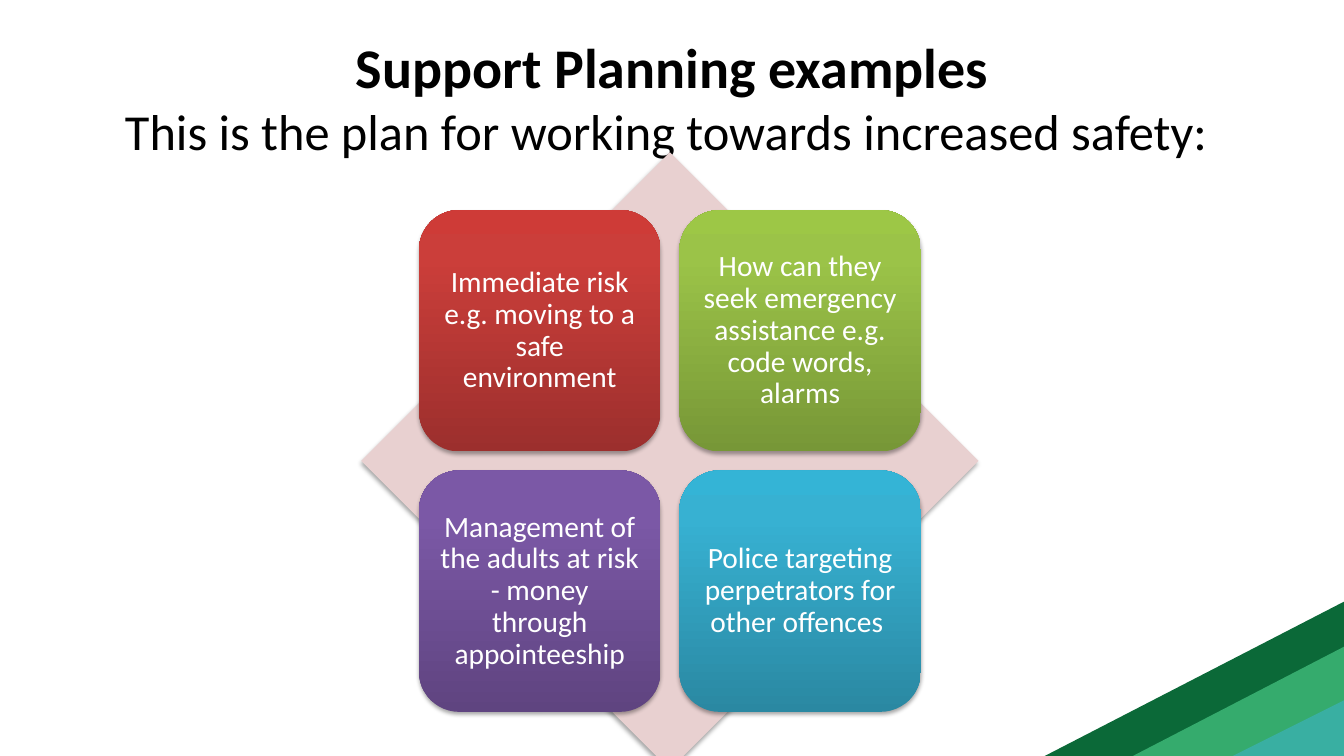
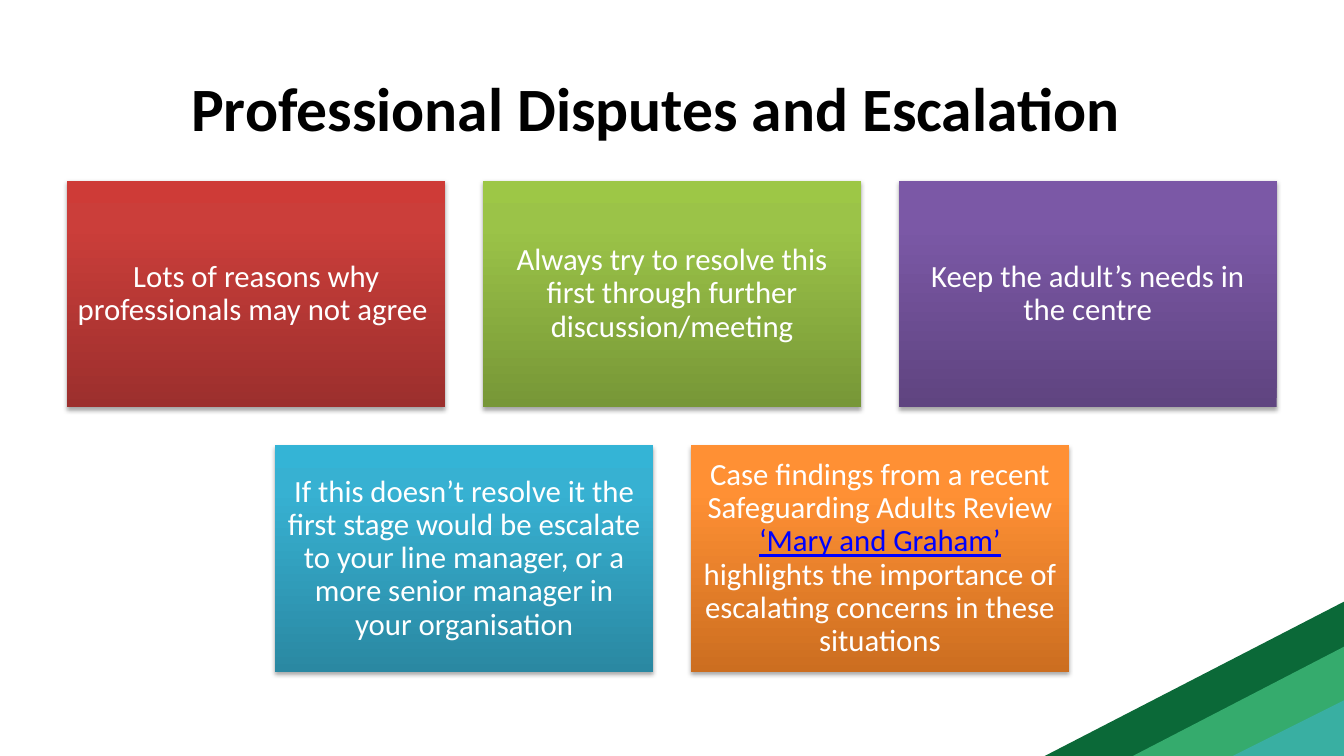
from copy import deepcopy
from dataclasses import dataclass

from lxml import etree
from pptx import Presentation
from pptx import util as u
from pptx.dml import color as c
from pptx.enum import shapes, text
from pptx.oxml import ns

PX = 9525
WIDE, HIGH = 1280, 720
GEOM = shapes.MSO_SHAPE


@dataclass(frozen=True)
class Theme:
    face: str = "Calibri"
    ink: str = "000000"
    white: str = "FFFFFF"
    link: str = "0000FF"
    pale: str = "E8D0D0"
    bands: tuple = ("0B6938", "35AB6D", "39AFA2")
    red: tuple = ("9C2F2D", "CB3E3A", "CE3B37")
    green: tuple = ("779737", "9BC348", "9DC746")
    violet: tuple = ("5F4480", "7B58A6", "7C57A8")
    blue: tuple = ("2A88A2", "37B1D2", "34B4D6")
    orange: tuple = ("CC6E20", "FF9034", "FF9136")
    stops: tuple = (0, 0.8, 1)
    head: int = 40
    lead: int = 36
    title: int = 44
    tile: int = 21
    card: int = 22


T = Theme()
FILLS = (T.red, T.green, T.violet, T.blue, T.orange)


def put(item, vals):
    for key, val in vals.items():
        setattr(item, key, val)


def span(*box):
    return [u.Emu(v * PX) for v in box]


def rgb(code):
    return c.RGBColor.from_string(code)


def shade(shape):
    glow = shape._element.spPr.find(ns.qn("a:effectLst"))
    vals = {"blurRad": "40000", "dist": "23000", "dir": "5400000", "rotWithShape": "0"}
    cast = etree.SubElement(glow, ns.qn("a:outerShdw"), vals)
    tone = etree.SubElement(cast, ns.qn("a:srgbClr"), {"val": "000000"})
    etree.SubElement(tone, ns.qn("a:alpha"), {"val": "35000"})


def blend(shape, tones):
    shape.fill.gradient()
    shape.fill.gradient_angle = 90
    stops = shape._element.spPr.find(".//" + ns.qn("a:gsLst"))
    stops.append(deepcopy(stops[-1]))
    for stop, pos, tone in zip(shape.fill.gradient_stops, T.stops, tones):
        stop.color.rgb = rgb(tone)
        stop.position = pos


def form(slide, kind, box, fill):
    shape = slide.shapes.add_shape(kind, *span(*box))
    shape.shadow.inherit = False
    shape.line.fill.background()
    if isinstance(fill, tuple):
        blend(shape, fill)
    else:
        shape.fill.solid()
        shape.fill.fore_color.rgb = rgb(fill)
    return shape


def frame(shape, inset):
    body = shape.text_frame
    put(body, {"word_wrap": True, "vertical_anchor": text.MSO_ANCHOR.MIDDLE})
    sides = ("left", "top", "right", "bottom")
    put(body, {"margin_" + side: u.Emu(inset * PX) for side in sides})
    return body


def say(para, words, size, tone, **more):
    run = para.add_run()
    run.text = words
    put(run.font, {"name": T.face, "size": u.Pt(size), **more})
    run.font.color.rgb = rgb(tone)


def title(slide, box, lines):
    body = frame(slide.shapes.add_textbox(*span(*box)), 0)
    for num, (words, size, bold) in enumerate(lines):
        para = body.add_paragraph() if num else body.paragraphs[0]
        para.alignment = text.PP_ALIGN.CENTER
        say(para, words, size, T.ink, bold=bold)


def card(slide, kind, box, fill, runs, size):
    shape = form(slide, kind, box, fill)
    shade(shape)
    para = frame(shape, 9).paragraphs[0]
    put(para, {"alignment": text.PP_ALIGN.CENTER, "line_spacing": 0.9})
    for words, link in runs:
        say(para, words, size, T.link if link else T.white, underline=link)


def corner(slide):
    for left, top, tone in zip((995, 1079, 1174), (573, 616, 667), T.bands):
        box = (left, top, WIDE - left, HIGH - top)
        wedge = form(slide, GEOM.RIGHT_TRIANGLE, box, tone)
        wedge._element.spPr.xfrm.set("flipH", "1")


def matrix(slide, box, items):
    left, top, side, _ = box
    cell, gap = 230, 18
    edge = (side - 2 * cell - gap) // 2
    shade(form(slide, GEOM.DIAMOND, box, T.pale))
    for num, (words, fill) in enumerate(zip(items, FILLS)):
        row, col = divmod(num, 2)
        x = left + edge + col * (cell + gap)
        y = top + edge + row * (cell + gap)
        spot = (x, y, cell, cell)
        card(slide, GEOM.ROUNDED_RECTANGLE, spot, fill, [(words, False)], T.tile)


def grid(slide, box, items):
    left, top, wide, high = box
    cols, gap = 3, 36
    w = (wide - (cols - 1) * gap) // cols
    h = (high - gap) // 2
    for num, (runs, fill) in enumerate(zip(items, FILLS)):
        row, col = divmod(num, cols)
        count = min(cols, len(items) - row * cols)
        start = left + (wide - count * w - (count - 1) * gap) // 2
        spot = (start + col * (w + gap), top + row * (h + gap), w, h)
        card(slide, GEOM.RECTANGLE, spot, fill, runs, T.card)


def plan(slide):
    title(slide, (64, 24, 1152, 136), [
        ("Support Planning examples", T.head, True),
        ("This is the plan for working towards increased safety: ", T.lead, False),
    ])
    matrix(slide, (344, 145, 588, 588), [
        "Immediate risk e.g. moving to a safe environment",
        "How can they seek emergency assistance e.g. code words, alarms",
        "Management of the adults at risk - money through appointeeship",
        "Police targeting perpetrators for other offences ",
    ])


def dispute(slide):
    title(slide, (49, 60, 1152, 84), [
        ("Professional Disputes and Escalation", T.title, True),
    ])
    grid(slide, (64, 172, 1152, 468), [
        [("Lots of reasons why professionals may not agree ", False)],
        [("Always try to resolve this first through further discussion/meeting", False)],
        [("Keep the adult’s needs in the centre", False)],
        [("If this doesn’t resolve it the first stage would be escalate to your "
          "line manager, or a more senior manager in your organisation", False)],
        [("Case findings from a recent Safeguarding Adults Review ", False),
         ("‘Mary and Graham’", True),
         (" highlights the importance of escalating concerns in these situations", False)],
    ])


def main():
    deck = Presentation()
    put(deck, {"slide_width": u.Emu(WIDE * PX), "slide_height": u.Emu(HIGH * PX)})
    for build in (plan, dispute):
        slide = deck.slides.add_slide(deck.slide_layouts[6])
        corner(slide)
        build(slide)
    deck.save("out.pptx")


if __name__ == "__main__":
    main()
